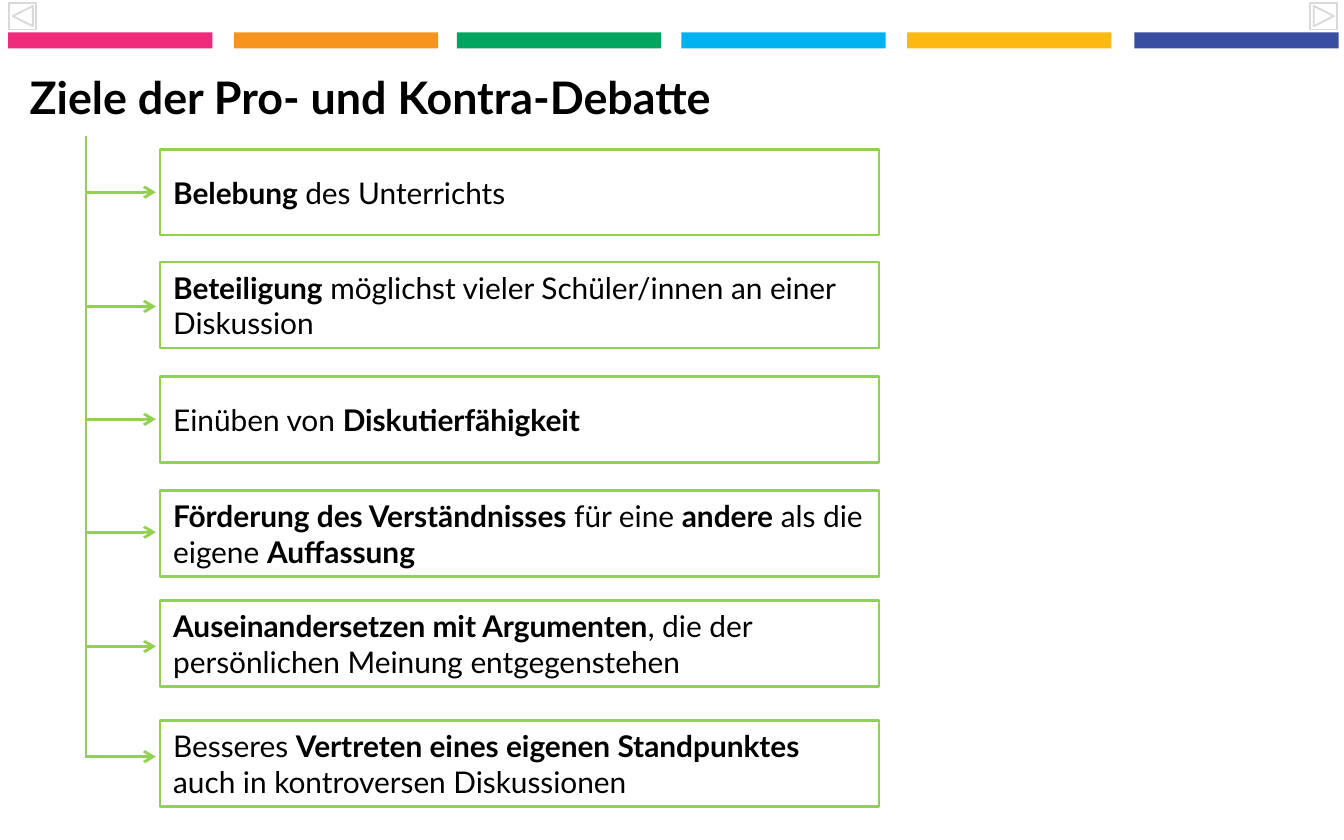
from lxml import etree
from pptx import Presentation
from pptx.dml.color import RGBColor
from pptx.enum import shapes, text
from pptx.oxml.ns import qn
from pptx.util import Inches, Pt

BLACK = RGBColor(0x00, 0x00, 0x00)
GREEN = RGBColor(0x92, 0xD0, 0x50)
GREY = RGBColor(0xD9, 0xD9, 0xD9)
PINK = RGBColor(0xEE, 0x2A, 0x7B)
ORANGE = RGBColor(0xF7, 0x94, 0x1D)
EMERALD = RGBColor(0x00, 0xA6, 0x5D)
CYAN = RGBColor(0x00, 0xB3, 0xF0)
YELLOW = RGBColor(0xFD, 0xB9, 0x13)
BLUE = RGBColor(0x37, 0x4E, 0xA2)
FONT = "Lato"
TRUNK_X = 0.64


def add_box(kind, x, y, w, h):
    sp = s.shapes.add_shape(kind, Inches(x), Inches(y), Inches(w), Inches(h))
    sp.shadow.inherit = False
    return sp


def add_line(x1, y1, x2, y2, arrow=False):
    line = s.shapes.add_connector(shapes.MSO_CONNECTOR.STRAIGHT,
                                  Inches(x1), Inches(y1), Inches(x2), Inches(y2))
    line.line.color.rgb = GREEN
    line.line.width = Pt(1.5)
    if arrow:
        etree.SubElement(line.line._get_or_add_ln(), qn("a:tailEnd"), type="arrow")
    etree.SubElement(line._element.spPr, qn("a:effectLst"))


prs = Presentation()
prs.slide_width, prs.slide_height = Inches(10), Inches(6.25)
s = prs.slides.add_slide(prs.slide_layouts[5])

# Coloured bars along the top
bars = [(0.06, PINK), (1.74, ORANGE), (3.4, EMERALD),
        (5.07, CYAN), (6.75, YELLOW), (8.44, BLUE)]
for x, color in bars:
    sp = add_box(shapes.MSO_SHAPE.RECTANGLE, x, 0.24, 1.52, 0.12)
    sp.fill.solid()
    sp.fill.fore_color.rgb = color
    sp.line.fill.background()

# Title
title = s.shapes.title
title.left, title.top = Inches(0.22), Inches(0.48)
title.width, title.height = Inches(9.56), Inches(0.47)
tf = title.text_frame
tf.margin_left = tf.margin_right = tf.margin_top = tf.margin_bottom = 0
tf.vertical_anchor = text.MSO_ANCHOR.MIDDLE
tf.text = "Ziele der Pro- und Kontra-Debatte"
p = tf.paragraphs[0]
p.alignment = text.PP_ALIGN.LEFT
p.font.name, p.font.size, p.font.bold = FONT, Pt(24), True
p.font.color.rgb = BLACK

# Navigation buttons
for kind, x in [(shapes.MSO_SHAPE.ACTION_BUTTON_BACK_OR_PREVIOUS, 0.07),
                (shapes.MSO_SHAPE.ACTION_BUTTON_FORWARD_OR_NEXT, 9.75)]:
    sp = add_box(kind, x, 0.02, 0.2, 0.2)
    sp.fill.background()
    sp.line.color.rgb = GREY
    sp.line.width = Pt(1)

# Goals: box top, arrow height, runs as (text, bold)
goals = [
    (1.11, 1.43, [("Belebung ", True), ("des Unterrichts", False)]),
    (1.95, 2.28, [("Beteiligung", True),
                  (" möglichst vieler Schüler/innen an einer Diskussion", False)]),
    (2.8, 3.12, [("Einüben von ", False), ("Diskutierfähigkeit", True)]),
    (3.65, 3.96, [("Förderung des Verständnisses ", True), ("für eine ", False),
                  ("andere", True), (" als die eigene ", False),
                  ("Auffassung", True)]),
    (4.47, 4.81, [("Auseinandersetzen mit Argumenten", True),
                  (", die der persönlichen Meinung entgegenstehen", False)]),
    (5.36, 5.63, [("Besseres ", False),
                  ("Vertreten eines eigenen Standpunktes ", True),
                  ("auch in kontroversen Diskussionen", False)]),
]
for top, arrow_y, runs in goals:
    sp = add_box(shapes.MSO_SHAPE.RECTANGLE, 1.19, top, 5.35, 0.64)
    sp.fill.background()
    sp.line.color.rgb = GREEN
    sp.line.width = Pt(1.5)
    tf = sp.text_frame
    tf.word_wrap = True
    tf.vertical_anchor = text.MSO_ANCHOR.MIDDLE
    p = tf.paragraphs[0]
    p.alignment = text.PP_ALIGN.LEFT
    p.font.name, p.font.size = FONT, Pt(16)
    p.font.color.rgb = BLACK
    for words, bold in runs:
        r = p.add_run()
        r.text = words
        r.font.bold = bold
    add_line(TRUNK_X, arrow_y, 1.16, arrow_y, arrow=True)

# Trunk joining the arrows
add_line(TRUNK_X, 1.01, TRUNK_X, 5.64)

prs.save("out.pptx")
